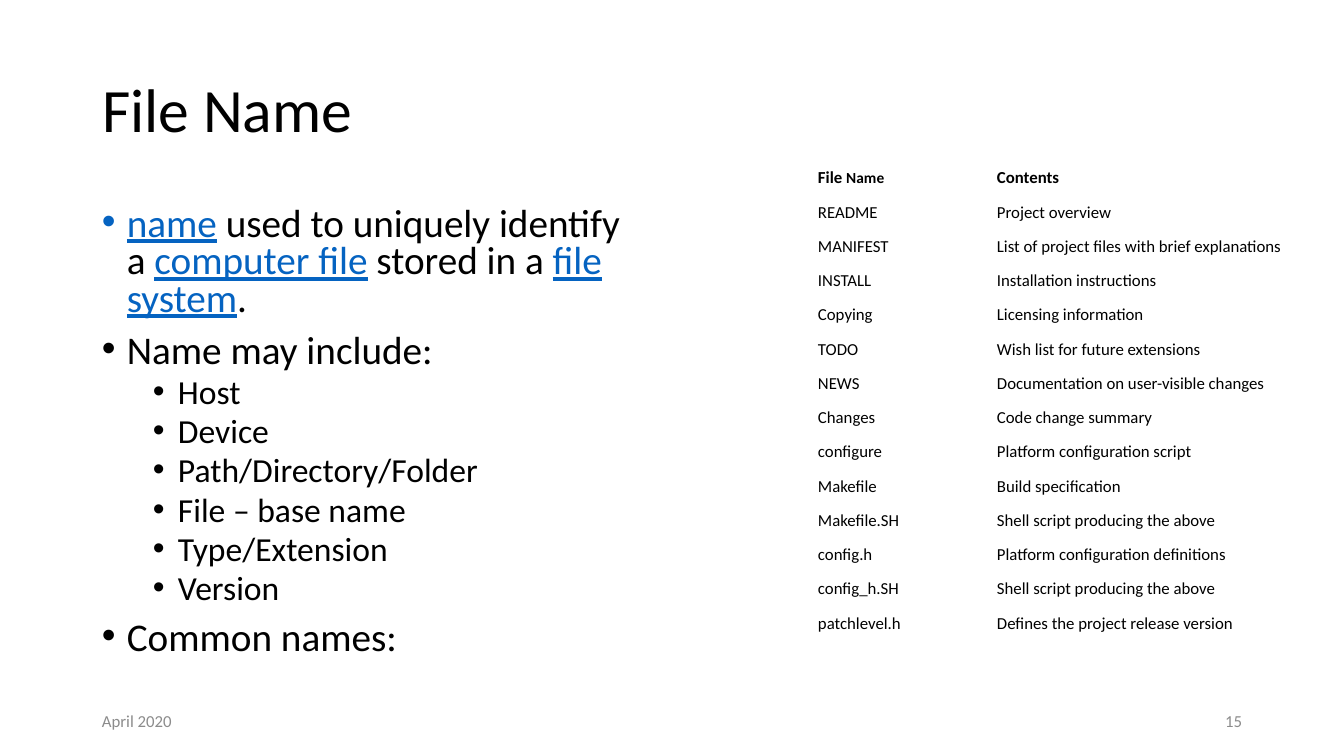
import pptx
import pptx.dml.color
import pptx.enum.text
import pptx.oxml.ns
import pptx.util
from lxml import etree

ALIGN = pptx.enum.text.PP_ALIGN
MIDDLE = pptx.enum.text.MSO_ANCHOR.MIDDLE
TOP = pptx.enum.text.MSO_ANCHOR.TOP
COLORS = {"text": "000000", "link": "0563C1", "muted": "8C8C8C"}
FONT = "Calibri"
LEFT_EDGE = 92

DEFINITION = [
    ("name", "link"),
    (" used to uniquely identify a ", "text"),
    ("computer file", "link"),
    (" stored in a ", "text"),
    ("file system", "link"),
    (".", "text"),
]
POINTS = [
    (0, DEFINITION),
    (0, [("Name may include:", "text")]),
    (1, [("Host", "text")]),
    (1, [("Device", "text")]),
    (1, [("Path/Directory/Folder", "text")]),
    (1, [("File – base name", "text")]),
    (1, [("Type/Extension", "text")]),
    (1, [("Version", "text")]),
    (0, [("Common names:", "text")]),
]
LEVELS = [
    {"size": 28, "before": 10, "indent": 25},
    {"size": 24, "before": 5, "indent": 76},
]
COMMON_FILES = [
    ("README", "Project overview"),
    ("MANIFEST", "List of project files with brief explanations"),
    ("INSTALL", "Installation instructions"),
    ("Copying", "Licensing information"),
    ("TODO", "Wish list for future extensions"),
    ("NEWS", "Documentation on user-visible changes"),
    ("Changes", "Code change summary"),
    ("configure", "Platform configuration script"),
    ("Makefile", "Build specification"),
    ("Makefile.SH", "Shell script producing the above"),
    ("config.h", "Platform configuration definitions"),
    ("config_h.SH", "Shell script producing the above"),
    ("patchlevel.h", "Defines the project release version"),
]


def px(length):
    return pptx.util.Emu(round(length * 914400 / 100.8))


def apply(target, values):
    for name, value in values.items():
        setattr(target, name, value)


def add_run(paragraph, text, size, color="text", **extra):
    run = paragraph.add_run()
    run.text = text
    apply(run.font, {"name": FONT, "size": pptx.util.Pt(size), **extra})
    run.font.color.rgb = pptx.dml.color.RGBColor.from_string(COLORS[color])


def add_bullet(paragraph, indent):
    properties = paragraph._p.get_or_add_pPr()
    properties.set("marL", str(px(indent)))
    properties.set("indent", str(-px(25)))
    for tag, key, value in (("a:buFont", "typeface", "Arial"), ("a:buChar", "char", "•")):
        etree.SubElement(properties, pptx.oxml.ns.qn(tag)).set(key, value)


def add_box(slide, left, top, width, height, anchor):
    box = slide.shapes.add_textbox(px(left), px(top), px(width), px(height))
    apply(box.text_frame, {"word_wrap": True, "vertical_anchor": anchor})
    return box.text_frame


def add_title(slide, text):
    title = slide.shapes.title
    apply(title, {"left": px(LEFT_EDGE), "top": px(40), "width": px(1160), "height": px(146)})
    apply(title.text_frame, {"word_wrap": True, "vertical_anchor": MIDDLE})
    heading = title.text_frame.paragraphs[0]
    apply(heading, {"alignment": ALIGN.LEFT, "line_spacing": 0.9})
    add_run(heading, text, 44)


def add_points(slide):
    frame = add_box(slide, LEFT_EDGE, 202, 570, 480, TOP)
    frame.margin_right = px(20)
    for number, (level, pieces) in enumerate(POINTS):
        style = LEVELS[level]
        point = frame.add_paragraph() if number else frame.paragraphs[0]
        before = style["before"] if number else 0
        apply(point, {"level": level, "line_spacing": 0.8, "space_before": pptx.util.Pt(before)})
        add_bullet(point, style["indent"])
        for text, color in pieces:
            add_run(point, text, style["size"], color, underline=color == "link")


def fill_cell(cell, pieces, bold):
    cell.fill.background()
    apply(cell, {
        "vertical_anchor": MIDDLE,
        "margin_left": px(8),
        "margin_right": px(8),
        "margin_top": px(4),
        "margin_bottom": px(4),
    })
    for text, size in pieces:
        add_run(cell.text_frame.paragraphs[0], text, size, bold=bold)


def add_file_table(slide):
    header = [[("File ", 12), ("Name", 11)], [("Contents", 12)]]
    rows = [header] + [[[(text, 12)] for text in entry] for entry in COMMON_FILES]
    frame = slide.shapes.add_table(len(rows), 2, px(810), px(161), px(490), px(480))
    table = frame.table
    apply(table, {"first_row": False, "horz_banding": False})
    for column, width in zip(table.columns, (179, 311)):
        column.width = px(width)
    for number, entry in enumerate(rows):
        table.rows[number].height = px(480) // len(rows)
        for column, pieces in enumerate(entry):
            fill_cell(table.cell(number, column), pieces, bold=number == 0)


def add_footer(slide, left, text, alignment):
    footer = add_box(slide, left, 701, 302, 40, MIDDLE).paragraphs[0]
    footer.alignment = alignment
    add_run(footer, text, 12, "muted")


def main():
    deck = pptx.Presentation()
    apply(deck, {"slide_width": px(1344), "slide_height": px(756)})
    slide = deck.slides.add_slide(deck.slide_layouts[5])
    add_title(slide, "File Name")
    add_points(slide)
    add_footer(slide, 950, "15", ALIGN.RIGHT)
    add_file_table(slide)
    add_footer(slide, LEFT_EDGE, "April 2020", ALIGN.LEFT)
    deck.save("out.pptx")


if __name__ == "__main__":
    main()
